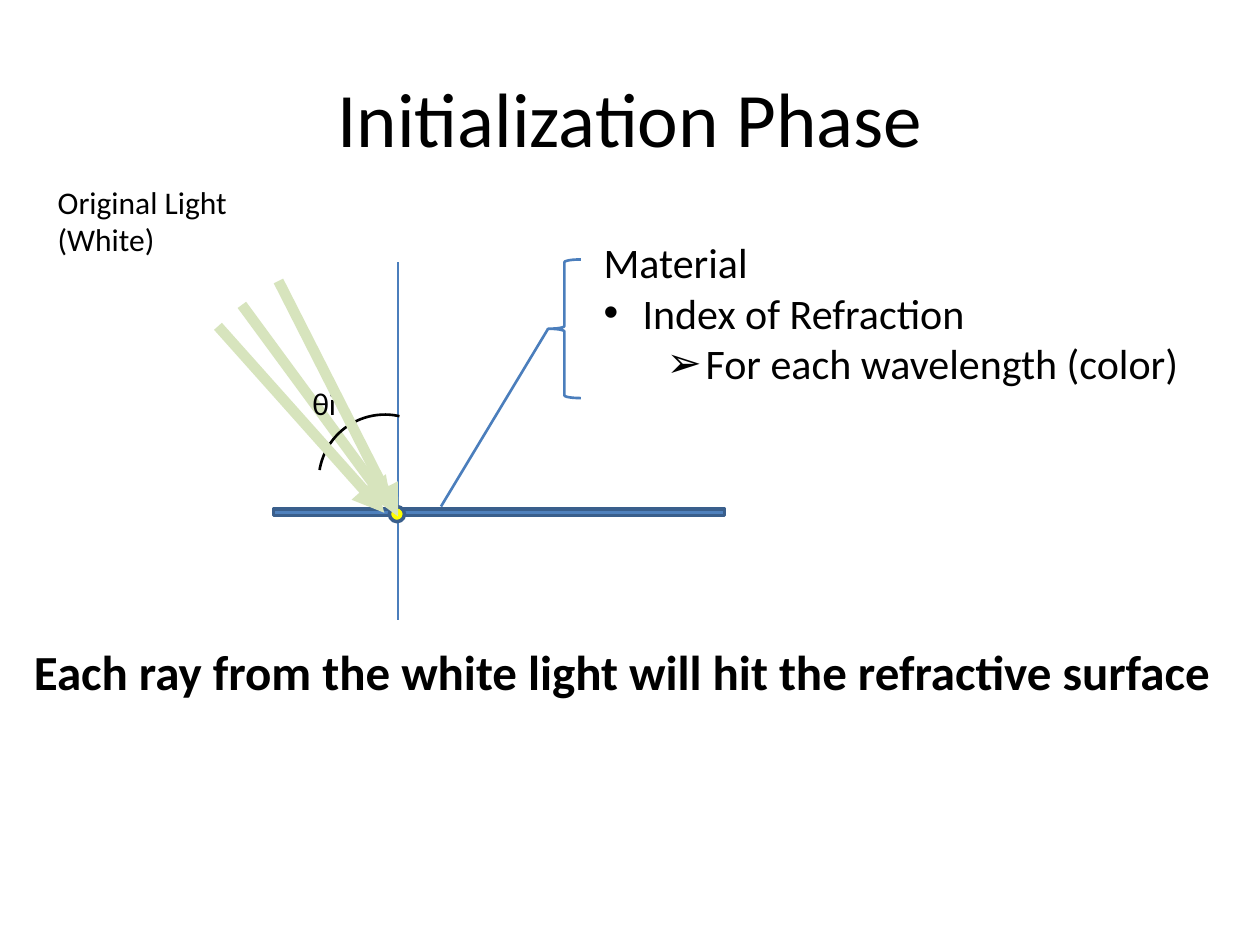
from pptx import Presentation
from pptx.dml.color import RGBColor
from pptx.enum import shapes, text
from pptx.oxml import parse_xml
from pptx.oxml.ns import nsdecls
from pptx.util import Inches, Pt

BLACK = RGBColor(0x00, 0x00, 0x00)
BLUE = RGBColor(0x4F, 0x81, 0xBD)
EDGE = RGBColor(0x3A, 0x5F, 0x8C)
LINE = RGBColor(0x4B, 0x7E, 0xBC)
RAY = RGBColor(0xD7, 0xE4, 0xBD)
YELLOW = RGBColor(0xFF, 0xFF, 0x00)
FONT = "Calibri"

TITLE = "Initialization Phase"
# text, level, bullet, left margin, first-line indent
MATERIAL = [
    ("Material", 0, None, 0, 0),
    ("Index of Refraction", 0, "•", 0.31, -0.31),
    ("For each wavelength (color)", 1, "➢", 0.81, -0.31),
]
SOURCE_LABEL = ["Original Light", "(White)"]
ANGLE_LABEL = ["θi"]
CAPTION = ["Each ray from the white light will hit the refractive surface"]
FIRST_RAY = ((1.92, 2.42), (3.11, 4.04))
FRONT_RAYS = [((1.73, 2.59), (3.05, 4.07)), ((2.21, 2.23), (3.16, 4.10))]
NORMAL = ((3.16, 2.08), (3.16, 4.92))
POINTER = ((3.50, 4.02), (4.35, 2.61))


def inches(*values):
    return [Inches(v) for v in values]


def add_run(p, content, size, bold=None):
    r = p.add_run()
    r.text = content
    r.font.name, r.font.size, r.font.bold = FONT, Pt(size), bold
    r.font.color.rgb = BLACK


def add_label(s, box, lines, size, bold=None, wrap=True):
    tf = s.shapes.add_textbox(*inches(*box)).text_frame
    tf.word_wrap = wrap
    tf.auto_size = text.MSO_AUTO_SIZE.SHAPE_TO_FIT_TEXT
    for i, content in enumerate(lines):
        p = tf.add_paragraph() if i else tf.paragraphs[0]
        add_run(p, content, size, bold)


def add_line(s, ends, color, width, arrow=False):
    start, end = ends
    line = s.shapes.add_connector(shapes.MSO_CONNECTOR.STRAIGHT, *inches(*start, *end))
    line.line.color.rgb, line.line.width = color, Pt(width)
    if arrow:
        line.line._get_or_add_ln().append(
            parse_xml(f'<a:tailEnd {nsdecls("a")} type="triangle"/>'))
    line._element.spPr.append(parse_xml(f'<a:effectLst {nsdecls("a")}/>'))
    return line


def add_shape(s, kind, box, color, width, fill=None):
    sp = s.shapes.add_shape(kind, *inches(*box))
    sp.shadow.inherit = False
    if fill is None:
        sp.fill.background()
    else:
        sp.fill.solid()
        sp.fill.fore_color.rgb = fill
    sp.line.color.rgb, sp.line.width = color, Pt(width)
    return sp


def place(sp, box):
    sp.left, sp.top, sp.width, sp.height = inches(*box)


def set_bullet(p, bullet, margin, indent):
    pPr = p._p.get_or_add_pPr()
    pPr.set("marL", str(Inches(margin)))
    pPr.set("indent", str(Inches(indent)))
    if bullet is None:
        pPr.append(parse_xml(f'<a:buNone {nsdecls("a")}/>'))
    else:
        pPr.append(parse_xml(f'<a:buFont {nsdecls("a")} typeface="Arial"/>'))
        pPr.append(parse_xml(f'<a:buChar {nsdecls("a")} char="{bullet}"/>'))


def fill_material(body):
    place(body, (4.69, 1.83, 4.97, 1.72))
    tf = body.text_frame
    tf.word_wrap = True
    tf.auto_size = text.MSO_AUTO_SIZE.NONE
    for i, (content, level, bullet, margin, indent) in enumerate(MATERIAL):
        p = tf.add_paragraph() if i else tf.paragraphs[0]
        p.level = level
        p.space_before = Pt(0)
        set_bullet(p, bullet, margin, indent)
        add_run(p, content, 24)


def main():
    prs = Presentation()
    prs.slide_width, prs.slide_height = inches(10, 7.5)
    s = prs.slides.add_slide(prs.slide_layouts[1])

    title = s.shapes.title
    place(title, (0.5, 0.3, 9, 1.25))
    title.text_frame.vertical_anchor = text.MSO_ANCHOR.MIDDLE
    p = title.text_frame.paragraphs[0]
    p.alignment = text.PP_ALIGN.CENTER
    add_run(p, TITLE, 44)
    fill_material(s.placeholders[1])

    kinds = shapes.MSO_SHAPE
    add_line(s, NORMAL, LINE, 0.75)
    add_line(s, FIRST_RAY, RAY, 6, arrow=True)
    add_shape(s, kinds.RECTANGLE, (2.17, 4.04, 3.58, 0.05), EDGE, 2, BLUE)
    add_shape(s, kinds.OVAL, (3.09, 4.02, 0.12, 0.12), EDGE, 2, YELLOW)
    pointer = add_line(s, POINTER, LINE, 1.5)
    brace = add_shape(s, kinds.LEFT_BRACE, (4.35, 2.06, 0.26, 1.1), LINE, 1.5)
    pointer.end_connect(brace, 1)

    add_label(s, (0.36, 1.4, 1.83, 0.71), SOURCE_LABEL, 18)
    arc = add_shape(s, kinds.ARC, (2.53, 3.29, 1.05, 1.05), BLACK, 1.5)
    arc.rotation = 300.7
    arc.adjustments[0], arc.adjustments[1] = 149.15, 205.25
    add_label(s, (2.38, 3, 0.42, 0.4), ANGLE_LABEL, 18)
    for ray in FRONT_RAYS:
        add_line(s, ray, RAY, 6, arrow=True)
    add_label(s, (0.17, 5.04, 9.66, 0.57), CAPTION, 28, bold=True, wrap=False)

    prs.save("out.pptx")


if __name__ == "__main__":
    main()
